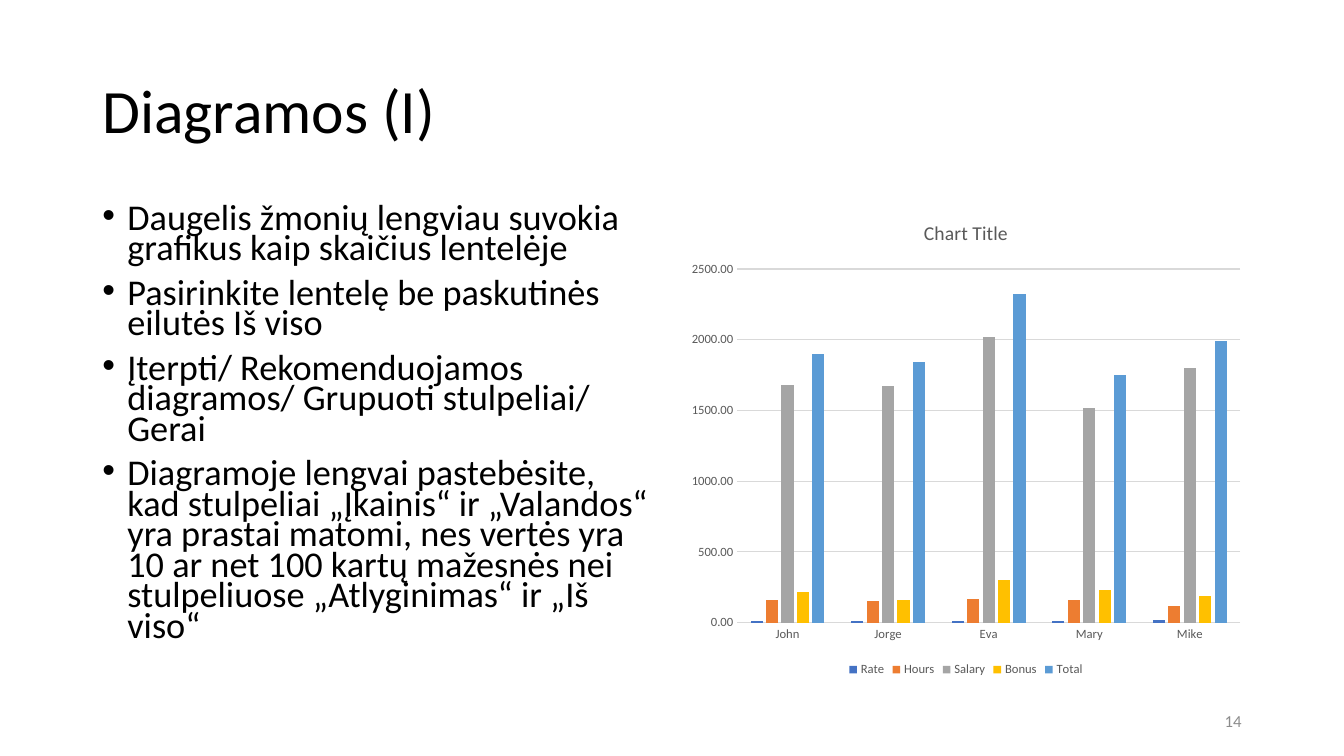
from lxml.etree import SubElement
from pptx import Presentation
from pptx.chart.data import CategoryChartData
from pptx.dml.color import RGBColor
from pptx.enum.chart import XL_CHART_TYPE, XL_LEGEND_POSITION, XL_TICK_MARK
from pptx.enum.text import MSO_ANCHOR, PP_ALIGN
from pptx.oxml.ns import qn
from pptx.util import Cm, Pt

# Content
TITLE = "Diagramos (I)"
BULLETS = [
    "Daugelis žmonių lengviau suvokia grafikus kaip skaičius lentelėje",
    "Pasirinkite lentelę be paskutinės eilutės Iš viso",
    "Įterpti/ Rekomenduojamos diagramos/ Grupuoti stulpeliai/ Gerai",
    "Diagramoje lengvai pastebėsite, kad stulpeliai „Įkainis“ ir „Valandos“ "
    "yra prastai matomi, nes vertės yra 10 ar net 100 kartų mažesnės nei "
    "stulpeliuose „Atlyginimas“ ir „Iš viso“",
]
PAGE_NUMBER = "14"
CHART_TITLE = "Chart Title"
PEOPLE = ["John", "Jorge", "Eva", "Mary", "Mike"]
PAY = {
    "Rate": [10, 10, 10, 10, 20],
    "Hours": [160, 150, 170, 160, 120],
    "Salary": [1680, 1670, 2020, 1520, 1800],
    "Bonus": [220, 160, 300, 230, 190],
    "Total": [1900, 1840, 2320, 1750, 1990],
}
COLORS = {
    "text": "000000", "page": "8C8C8C", "label": "595959", "grid": "D9D9D9",
    "Rate": "4472C4", "Hours": "ED7D31", "Salary": "A5A5A5",
    "Bonus": "FFC000", "Total": "5B9BD5",
}
FONT = "Calibri"

# Layout in cm: two equal columns between the margins
WIDTH, HEIGHT = 33.87, 19.05
MARGIN, GUTTER = 2.33, 0.42
CONTENT_WIDTH = WIDTH - 2 * MARGIN
COLUMN_WIDTH = (CONTENT_WIDTH - GUTTER) / 2
COLUMN_TOP, COLUMN_HEIGHT = 5.07, 12.09
CHART_LEFT = MARGIN + COLUMN_WIDTH + GUTTER
PAGE_WIDTH = 7.62
HANGING = Cm(0.63)


def style(font, size, color):
    font.name, font.size, font.bold = FONT, Pt(size), False
    font.color.rgb = RGBColor.from_string(COLORS[color])


def add_text(slide, box, lines, size, color, anchor=MSO_ANCHOR.TOP):
    frame = slide.shapes.add_textbox(*map(Cm, box)).text_frame
    frame.word_wrap = True
    frame.vertical_anchor = anchor
    frame.text = "\n".join(lines)
    for paragraph in frame.paragraphs:
        for run in paragraph.runs:
            style(run.font, size, color)
    return frame.paragraphs


def add_bullet(paragraph):
    properties = paragraph._p.get_or_add_pPr()
    properties.set("marL", str(HANGING))
    properties.set("indent", str(-HANGING))
    SubElement(properties, qn("a:buFont")).set("typeface", "Arial")
    SubElement(properties, qn("a:buChar")).set("char", "•")


def set_line(line, color):
    line.color.rgb = RGBColor.from_string(COLORS[color])
    line.width = Pt(0.75)


def add_pay_chart(slide):
    data = CategoryChartData(number_format="0.00")
    data.categories = PEOPLE
    for name, values in PAY.items():
        data.add_series(name, values)
    box = (CHART_LEFT, COLUMN_TOP, COLUMN_WIDTH, COLUMN_HEIGHT)
    chart = slide.shapes.add_chart(
        XL_CHART_TYPE.COLUMN_CLUSTERED, *map(Cm, box), data).chart
    style(chart.font, 10, "text")

    # Title and legend
    chart.has_title = True
    heading = chart.chart_title.text_frame
    heading.text = CHART_TITLE
    style(heading.paragraphs[0].runs[0].font, 14, "label")
    chart.chart_title.include_in_layout = False
    chart.has_legend = True
    chart.legend.position = XL_LEGEND_POSITION.BOTTOM
    chart.legend.include_in_layout = False
    style(chart.legend.font, 9, "label")

    # Axes
    people_axis, pay_axis = chart.category_axis, chart.value_axis
    for axis in (people_axis, pay_axis):
        axis.major_tick_mark = axis.minor_tick_mark = XL_TICK_MARK.NONE
        style(axis.tick_labels.font, 9, "label")
    set_line(people_axis.format.line, "grid")
    pay_axis.format.line.fill.background()
    set_line(pay_axis.major_gridlines.format.line, "grid")
    pay_axis.tick_labels.number_format = "0.00"
    pay_axis.tick_labels.number_format_is_linked = False

    # Columns
    plot = chart.plots[0]
    plot.gap_width, plot.overlap, plot.vary_by_categories = 219, -27, False
    for series in plot.series:
        series.format.fill.solid()
        series.format.fill.fore_color.rgb = RGBColor.from_string(COLORS[series.name])


def main():
    deck = Presentation()
    deck.slide_width, deck.slide_height = Cm(WIDTH), Cm(HEIGHT)
    slide = deck.slides.add_slide(deck.slide_layouts[6])

    # Title
    title = add_text(slide, (MARGIN, 1.01, CONTENT_WIDTH, 3.68), [TITLE],
                     44, "text", MSO_ANCHOR.MIDDLE)
    title[0].line_spacing = 0.9

    # Bullets
    bullets = add_text(slide, (MARGIN, COLUMN_TOP, COLUMN_WIDTH, COLUMN_HEIGHT),
                       BULLETS, 25.9, "text")
    for index, bullet in enumerate(bullets):
        add_bullet(bullet)
        bullet.line_spacing = 0.7
        bullet.space_before = Pt(10 if index else 0)

    add_pay_chart(slide)

    # Page number
    page = add_text(slide, (WIDTH - MARGIN - PAGE_WIDTH, 17.66, PAGE_WIDTH, 1.01),
                    [PAGE_NUMBER], 12, "page", MSO_ANCHOR.MIDDLE)
    page[0].alignment = PP_ALIGN.RIGHT

    deck.save("out.pptx")


if __name__ == "__main__":
    main()
